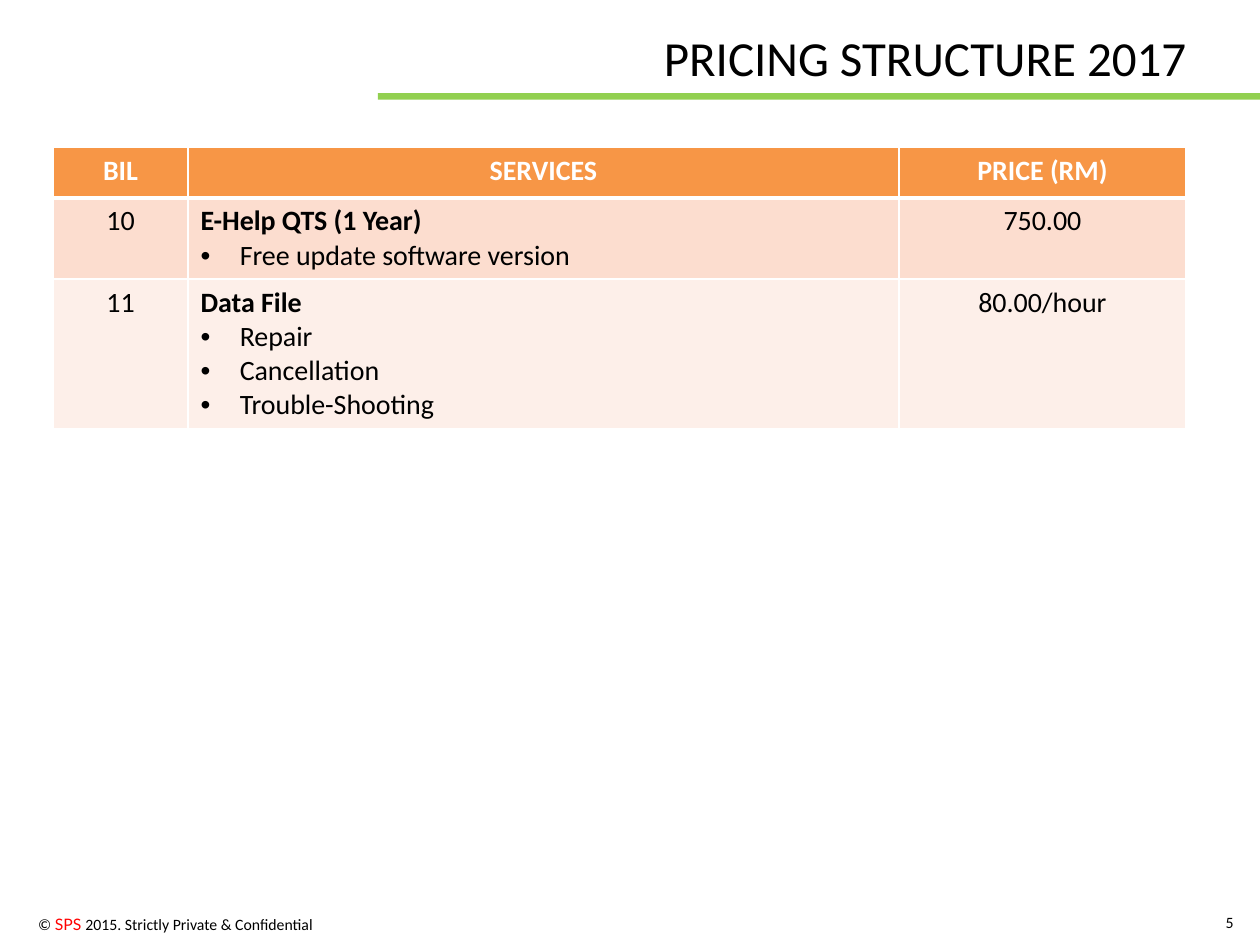
from lxml.etree import SubElement
from pptx import Presentation
from pptx.dml.color import RGBColor
from pptx.enum.shapes import MSO_SHAPE as Shape
from pptx.enum.text import MSO_ANCHOR as Anchor, MSO_AUTO_SIZE as AutoSize, PP_ALIGN as Align
from pptx.oxml.ns import qn
from pptx.util import Cm, Pt

COLOURS = {
    "rule": "92D050", "header": "F79646", "odd": "FCDDCF", "even": "FDEFE9",
    "ink": "000000", "paper": "FFFFFF", "accent": "FF0000",
}
HEADINGS = ["BIL", "SERVICES", "PRICE (RM)"]
SERVICES = [
    ("10", ["E-Help QTS (1 Year)", "Free update software version"], "750.00"),
    ("11", ["Data File", "Repair", "Cancellation", "Trouble-Shooting"], "80.00/hour"),
]
COLUMN_WIDTHS = [2.72, 14.33, 5.79]
ROW_HEIGHTS = [1.02, 1.6, 2.95]


def colour(name):
    """Return the named colour."""
    return RGBColor.from_string(COLOURS[name])


def place(shape, box):
    """Move a shape to a box given in centimetres."""
    for side, value in zip(("left", "top", "width", "height"), box):
        setattr(shape, side, Cm(value))


def write(paragraph, text, ink="ink", **formats):
    """Add one formatted run to a paragraph."""
    run = paragraph.add_run()
    run.text = text
    for key, value in {"name": "Calibri", "bold": False, **formats}.items():
        setattr(run.font, key, value)
    run.font.color.rgb = colour(ink)


def add_bullet(paragraph, indent=0.79):
    """Give a paragraph a hanging round bullet."""
    properties = paragraph._p.get_or_add_pPr()
    properties.set("marL", str(Cm(indent)))
    properties.set("indent", str(-Cm(indent)))
    SubElement(properties, qn("a:buFont"), typeface="Arial")
    SubElement(properties, qn("a:buChar"), char="•")


def add_borders(cell, bottom=1):
    """Draw white borders around a cell, with a chosen bottom width."""
    properties = cell._tc.get_or_add_tcPr()
    widths = {"lnL": 1, "lnR": 1, "lnT": 1, "lnB": bottom}
    for position, (side, width) in enumerate(widths.items()):
        line = SubElement(properties, qn(f"a:{side}"), w=str(Pt(width)))
        fill = SubElement(line, qn("a:solidFill"))
        SubElement(fill, qn("a:srgbClr"), val=COLOURS["paper"])
        properties.insert(position, line)


def build_heading(slide, box):
    """Place the title and the green rule beneath it."""
    left, top, width, height = box
    rule = slide.shapes.add_shape(Shape.RECTANGLE, 0, 0, 0, 0)
    place(rule, (left, top + height, width, 0.13))
    rule.shadow.inherit = False
    rule.fill.solid()
    rule.fill.fore_color.rgb = colour("rule")
    rule.line.fill.background()
    title = slide.shapes.title
    place(title, (left + 5.51, top, 11.18, height))
    frame = title.text_frame
    formats = {"word_wrap": False, "vertical_anchor": Anchor.TOP, "auto_size": AutoSize.NONE}
    for key, value in formats.items():
        setattr(frame, key, value)
    heading = frame.paragraphs[0]
    heading.alignment = Align.LEFT
    write(heading, "PRICING STRUCTURE 2017", size=Pt(28))


def fill_cell(cell, lines, fill, centred, ink="ink", bold=False, bottom=1):
    """Fill a cell with a first line and bulleted lines below it."""
    cell.fill.solid()
    cell.fill.fore_color.rgb = colour(fill)
    add_borders(cell, bottom)
    for position, text in enumerate(lines):
        frame = cell.text_frame
        paragraph = frame.add_paragraph() if position else frame.paragraphs[0]
        paragraph.alignment = Align.CENTER if centred else Align.LEFT
        if position:
            add_bullet(paragraph)
        write(paragraph, text, ink, size=Pt(16), bold=bold and not position)


def build_prices(slide, left, top):
    """Place the price table."""
    prices = slide.shapes.add_table(
        len(ROW_HEIGHTS), len(COLUMN_WIDTHS), Cm(left), Cm(top),
        Cm(sum(COLUMN_WIDTHS)), Cm(sum(ROW_HEIGHTS))).table
    for column, width in zip(prices.columns, COLUMN_WIDTHS):
        column.width = Cm(width)
    for row, height in zip(prices.rows, ROW_HEIGHTS):
        row.height = Cm(height)
    for column, heading in enumerate(HEADINGS):
        fill_cell(prices.cell(0, column), [heading], "header", True, "paper", True, 3)
    for row, (number, service, price) in enumerate(SERVICES, 1):
        fill = "odd" if row % 2 else "even"
        fill_cell(prices.cell(row, 0), [number], fill, True)
        fill_cell(prices.cell(row, 1), service, fill, False, bold=True)
        fill_cell(prices.cell(row, 2), [price], fill, True)


def build_footer(slide, box, parts, anchor):
    """Place a right-aligned footer text made of formatted parts."""
    footer = slide.shapes.add_textbox(0, 0, 0, 0)
    place(footer, box)
    frame = footer.text_frame
    frame.word_wrap = True
    frame.vertical_anchor = anchor
    paragraph = frame.paragraphs[0]
    paragraph.alignment = Align.RIGHT
    for text, ink, font in parts:
        write(paragraph, text, ink, name=font, size=Pt(9))


def main():
    """Build and save the pricing slide."""
    deck = Presentation()
    deck.slide_width, deck.slide_height = Cm(25.4), Cm(19.05)
    slide = deck.slides.add_slide(deck.slide_layouts[5])
    build_heading(slide, (7.62, 0.43, 17.78, 1.45))
    build_prices(slide, 1.07, 2.97)
    build_footer(slide, (0, 18.31, 6.55, 0.64), [
        ("© ", "ink", "Calibri"),
        ("SPS ", "accent", "Lato"),
        ("2015. Strictly Private & Confidential", "ink", "Calibri"),
    ], Anchor.TOP)
    build_footer(slide, (24.1, 18.08, 1.02, 1.02), [("5", "ink", "Calibri")], Anchor.MIDDLE)
    deck.save("out.pptx")


if __name__ == "__main__":
    main()
